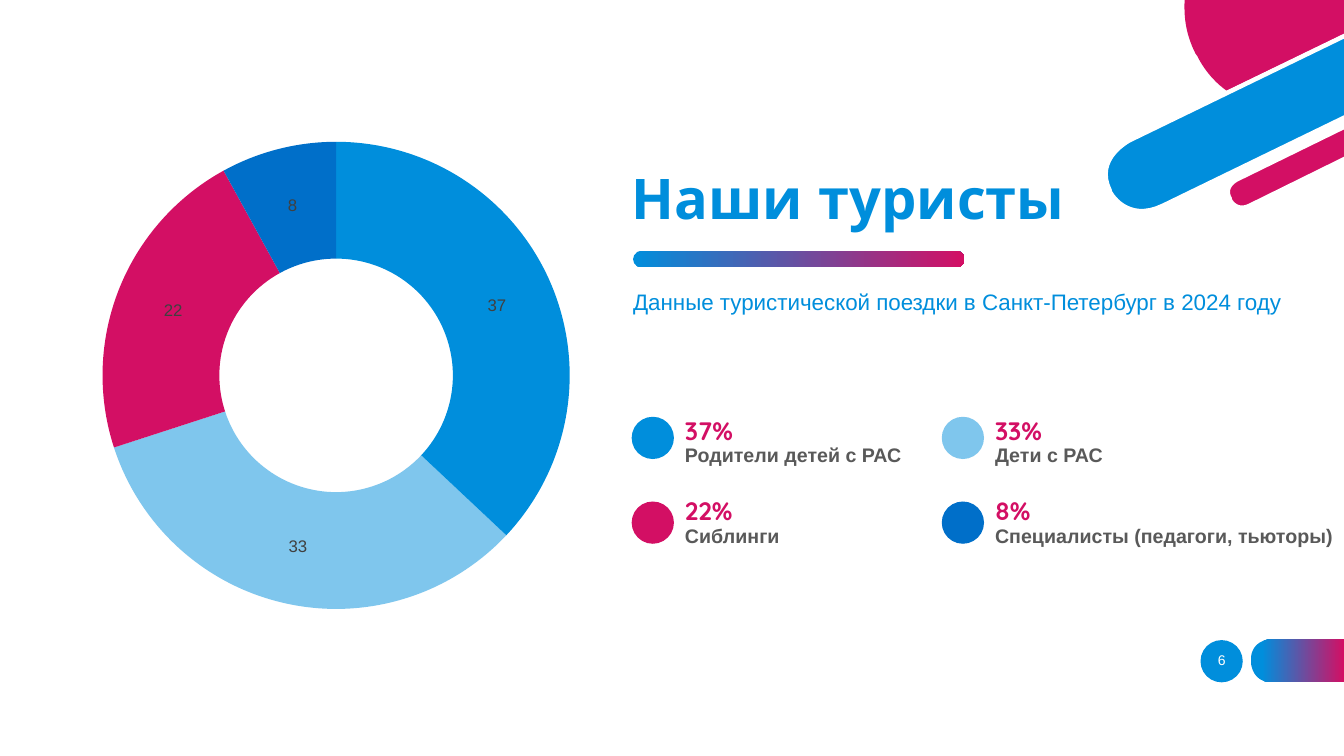
from pptx import Presentation
from pptx.chart.data import CategoryChartData
from pptx.dml.color import RGBColor
from pptx.enum import chart as charts, shapes, text
from pptx.oxml import ns, parse_xml
from pptx.util import Pt

BLUE = RGBColor(0x00, 0x8E, 0xDC)
DEEP_BLUE = RGBColor(0x00, 0x6F, 0xC9)
CRIMSON = RGBColor(0xD3, 0x0F, 0x64)
WHITE = RGBColor(0xFF, 0xFF, 0xFF)
GREY = RGBColor(0x59, 0x59, 0x59)
DARK = RGBColor(0x40, 0x40, 0x40)

# Value, label, colour and opacity in percent
GROUPS = [
    (37, "Родители детей с РАС", BLUE, 100),
    (33, "Дети с РАС", BLUE, 50),
    (22, "Сиблинги", CRIMSON, 100),
    (8, "Специалисты (педагоги, тьюторы)", DEEP_BLUE, 100),
]

# Outlines in points: a pair is a corner, six numbers are a Bézier curve
CRIMSON_DISC = [(855.4, 40.3), (855.4, 40.3, 861.8, 54.7, 876.2, 64.8),
                (963, 22.9), (963, -3), (846.4, -3),
                (845.3, 10.8, 846.7, 23.8, 853.9, 38.2)]
BLUE_BAR = [(807.1, 100.1), (807.1, 100.1, 781.2, 113, 792.7, 136.1),
            (792.7, 136.8), (792.7, 136.8, 804.2, 159.8, 830.9, 146.9),
            (963, 82.7), (963, 24.4)]
CRIMSON_BAR = [(963, 89.2), (883.4, 128.2),
               (883.4, 128.2, 873.4, 133.2, 878.4, 141.8), (878.4, 142.6),
               (878.4, 142.6, 882.7, 151.9, 892.8, 146.9), (963, 112.3)]
PAGE_TAB = [(908.6, 487.4), (960, 487.4), (960, 456.5), (908.6, 456.5),
            (908.6, 456.5, 893.5, 456.5, 893.5, 471.6), (893.5, 472.3),
            (893.5, 472.3, 893.5, 487.4, 908.6, 487.4)]


def apply(target, values):
    for name, value in values.items():
        setattr(target, name, value)


def paint(fill, colour, opacity=100):
    fill.solid()
    fill.fore_color.rgb = colour
    if opacity < 100:
        colour_node = fill._xPr.find(".//" + ns.qn("a:srgbClr"))
        alpha = colour_node.makeelement(ns.qn("a:alpha"), {"val": str(opacity * 1000)})
        colour_node.append(alpha)


def paint_gradient(fill, start=0):
    fill.gradient()
    fill.gradient_angle = 0
    for stop, position, colour in zip(fill.gradient_stops, (start, 1), (BLUE, CRIMSON)):
        stop.position = position
        stop.color.rgb = colour


def trace(outline, steps=16):
    """Turn corners and curves into a list of points."""
    points = []
    for item in outline:
        if len(item) == 2:
            points.append(item)
            continue
        (x0, y0), (x1, y1, x2, y2, x3, y3) = points[-1], item
        for step in range(1, steps + 1):
            t = step / steps
            a, b, c, d = (1 - t) ** 3, 3 * t * (1 - t) ** 2, 3 * t * t * (1 - t), t ** 3
            points.append((a * x0 + b * x1 + c * x2 + d * x3,
                           a * y0 + b * y1 + c * y2 + d * y3))
    return [(Pt(x), Pt(y)) for x, y in points]


def add_outline(page, outline, colour=None, border=0):
    first, *rest = trace(outline)
    builder = page.shapes.build_freeform(*first, scale=1)
    builder.add_line_segments(rest, close=True)
    shape = builder.convert_to_shape()
    shape.shadow.inherit = False
    if colour is None:
        paint_gradient(shape.fill, 0.12)
    else:
        paint(shape.fill, colour)
    if border:
        paint(shape.line.fill, WHITE)
        shape.line.width = Pt(border)
    else:
        shape.line.fill.background()


def add_preset(page, kind, left, top, width, height):
    shape = page.shapes.add_shape(kind, Pt(left), Pt(top), Pt(width), Pt(height))
    shape.shadow.inherit = False
    shape.line.fill.background()
    return shape


def add_dot(page, left, top, colour, opacity=100):
    dot = add_preset(page, shapes.MSO_SHAPE.OVAL, left, top, 30.2, 30.2)
    paint(dot.fill, colour, opacity)
    return dot


def write(box, words, place, size, colour, font="Arial", bold=False,
          anchor=text.MSO_ANCHOR.TOP, before=0, align=text.PP_ALIGN.LEFT):
    """Place a box and set its single line of text; no colour means gradient."""
    apply(box, dict(zip(("left", "top", "width", "height"), map(Pt, place))))
    apply(box.text_frame, {"text": words, "word_wrap": True, "vertical_anchor": anchor,
                           "auto_size": text.MSO_AUTO_SIZE.NONE})
    para = box.text_frame.paragraphs[0]
    apply(para, {"line_spacing": 0.9, "space_before": Pt(before), "alignment": align})
    span = para.runs[0]
    apply(span.font, {"name": font, "size": Pt(size), "bold": bold})
    if colour is None:
        paint_gradient(span.font.fill)
    else:
        span.font.color.rgb = colour
    return para


def add_text(page, words, place, **style):
    box = page.shapes.add_textbox(*map(Pt, place))
    write(box, words, place, **style)


def add_doughnut(page):
    data = CategoryChartData()
    data.categories = [str(number) for number in range(1, len(GROUPS) + 1)]
    data.add_series("Series 1", [group[0] for group in GROUPS])
    chart = page.shapes.add_chart(charts.XL_CHART_TYPE.DOUGHNUT, Pt(62.6), Pt(85.7),
                                  Pt(355), Pt(361.4), data).chart
    apply(chart, {"has_title": False, "has_legend": False})
    apply(chart.font, {"name": "Arial", "size": Pt(10)})
    plot = chart.plots[0]
    apply(plot, {"vary_by_categories": True, "has_data_labels": True})
    apply(plot.data_labels, {"show_value": True, "show_percentage": False})
    apply(plot.data_labels.font, {"name": "Arial", "size": Pt(12)})
    plot.data_labels.font.color.rgb = DARK
    for index, (_, _, colour, opacity) in enumerate(GROUPS):
        point = plot.series[0].points[index]
        paint(point.format.fill, colour, opacity)
        point.format.line.fill.background()

    # Hole size and the area taken by the ring
    area = chart._chartSpace.find(".//" + ns.qn("c:plotArea"))
    area.find(".//" + ns.qn("c:holeSize")).set("val", "52")
    for layout in area.findall(ns.qn("c:layout")):
        area.remove(layout)
    sizes = "".join(f'<c:{name} val="{value}"/>' for name, value in
                    (("x", 0.03), ("y", 0.04), ("w", 0.94), ("h", 0.93)))
    area.insert(0, parse_xml(
        f'<c:layout {ns.nsdecls("c")}><c:manualLayout><c:layoutTarget val="inner"/>'
        f'<c:xMode val="edge"/><c:yMode val="edge"/>{sizes}</c:manualLayout></c:layout>'))


def add_legend(page):
    for index, (value, label, colour, opacity) in enumerate(GROUPS):
        row, column = divmod(index, 2)
        shift = 221.5 * column
        left, width = 482.2 + shift, (185, 257)[column]
        add_dot(page, 451.2 + shift, 297.7 + 60.5 * row, colour, opacity)
        add_text(page, f"{value}%", (left, 293.3 + 57.5 * row, width, 28.8), size=18,
                 colour=CRIMSON, font="Quicksand", bold=True, before=10,
                 anchor=text.MSO_ANCHOR.BOTTOM)
        add_text(page, label, (left, 314.4 + 58.3 * row, width, 28.8), size=14,
                 colour=GREY, bold=True, before=6)


def main():
    deck = Presentation()
    apply(deck, {"slide_width": Pt(960), "slide_height": Pt(540)})
    page = deck.slides.add_slide(deck.slide_layouts[1])

    # Corner decoration
    add_outline(page, CRIMSON_DISC, CRIMSON)
    add_outline(page, CRIMSON_BAR, CRIMSON, border=3.2)
    add_outline(page, BLUE_BAR, BLUE, border=3.2)

    # Title, gradient rule and subtitle
    write(page.shapes.title, "Наши туристы", (444.2, 115.9, 346.3, 53.3), 40, None,
          font="Quicksand", bold=True, anchor=text.MSO_ANCHOR.BOTTOM)
    rule = add_preset(page, shapes.MSO_SHAPE.ROUNDED_RECTANGLE, 452.2, 179.3, 236.8, 11.8)
    rule.adjustments[0] = 0.5
    paint_gradient(rule.fill)
    subtitle = write(page.placeholders[1],
                     "Данные туристической поездки в Санкт-Петербург в 2024 году",
                     (445, 204.5, 508.3, 65.5), 16, BLUE, before=10)
    properties = subtitle._p.get_or_add_pPr()
    properties.set("marL", "0")
    properties.set("indent", "0")
    properties.append(parse_xml(f'<a:buNone {ns.nsdecls("a")}/>'))

    # Chart and its legend
    add_doughnut(page)
    add_legend(page)

    # Page number
    add_outline(page, PAGE_TAB)
    number = add_dot(page, 857.5, 457.2, BLUE)
    write(number, "6", (857.5, 457.2, 30.2, 30.2), 10, WHITE,
          anchor=text.MSO_ANCHOR.MIDDLE, align=text.PP_ALIGN.CENTER)
    apply(number.text_frame, {"margin_left": 0, "margin_right": 0})

    deck.save("out.pptx")


if __name__ == "__main__":
    main()
